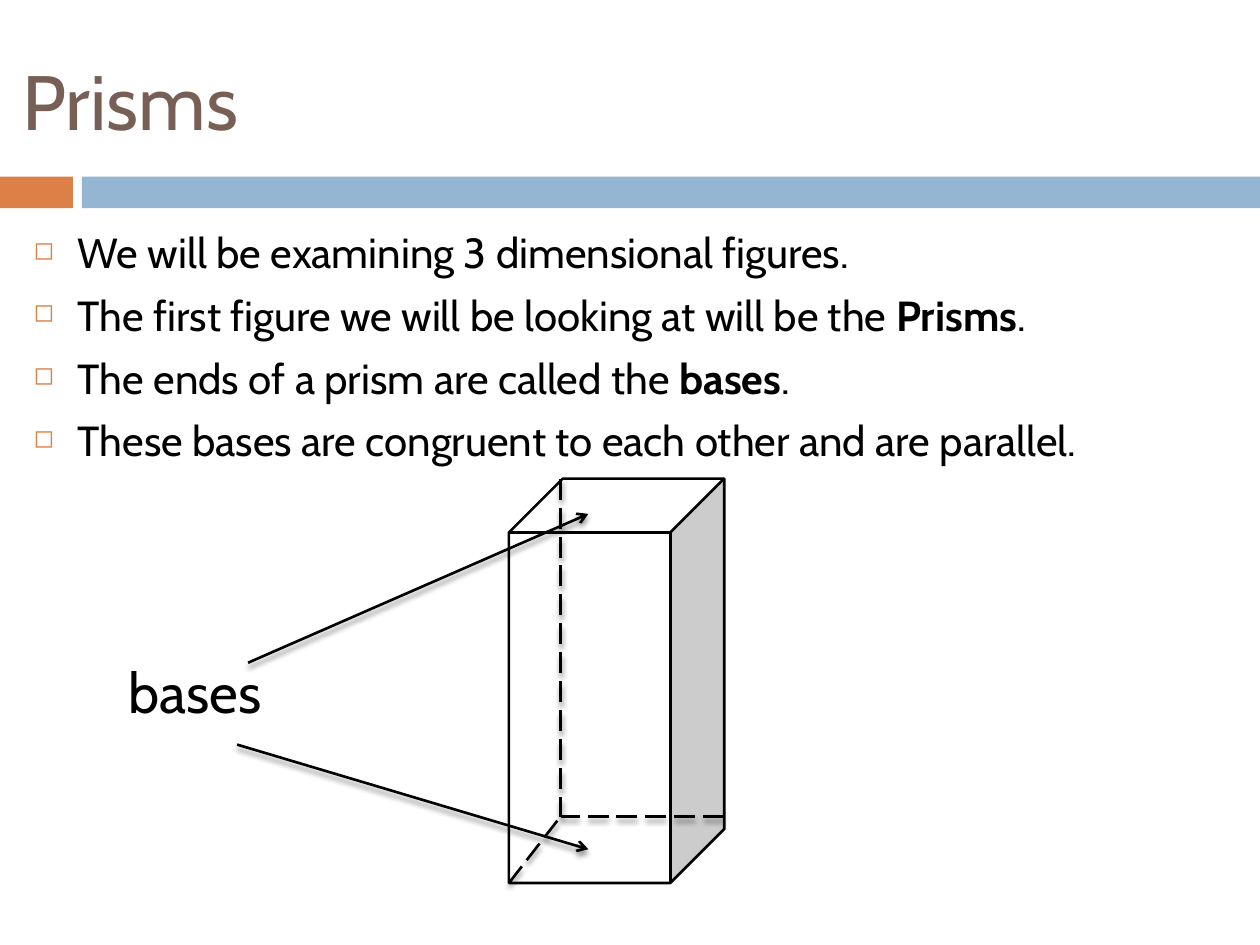
from lxml import etree
from pptx import Presentation
from pptx.dml.color import RGBColor
from pptx.enum.dml import MSO_LINE
from pptx.enum.shapes import MSO_CONNECTOR, MSO_SHAPE
from pptx.enum.text import MSO_ANCHOR
from pptx.oxml.ns import qn
from pptx.util import Cm, Pt

RECT, CUBE = MSO_SHAPE.RECTANGLE, MSO_SHAPE.CUBE
STRAIGHT, LONG_DASH = MSO_CONNECTOR.STRAIGHT, MSO_LINE.LONG_DASH
TOP, MIDDLE = MSO_ANCHOR.TOP, MSO_ANCHOR.MIDDLE

# Content: each paragraph is a list of (text, bold) runs
FONT, BLACK, WHITE, BROWN = "Cabin", "000000", "FFFFFF", "775F55"
ORANGE, BLUE = "DD8047", "94B6D2"
TITLE = [("Prisms", False)]
LABEL = [("bases", False)]
BULLETS = [
    [("We will be examining 3 dimensional figures.", False)],
    [("The first figure we will be looking at will be the ", False),
     ("Prisms", True), (".", False)],
    [("The ends of a prism are called the ", False),
     ("bases", True), (".", False)],
    [("These bases are congruent to each other and are parallel.", False)],
]

# Geometry in centimetres
SLIDE_W, SLIDE_H = 25.4, 19.05
BAR_TOP, BAR_H = 3.56, 0.64
BARS = [(0, 1.47, ORANGE), (1.65, SLIDE_W - 1.65, BLUE)]
LEFT, UP, WIDTH, HEIGHT = 10.26, 9.65, 4.34, 8.15
CORNER = (11.3, 16.46)
HIDDEN_ENDS = [(LEFT, UP + HEIGHT), (LEFT + WIDTH, CORNER[1]), (CORNER[0], UP)]
ARROWS = [((5, 13.36), (11.86, 10.36)), ((4.78, 15.01), (11.86, 17.12))]


def rgb(color):
    return RGBColor.from_string(color)


def sub(parent, tag, **attrs):
    return etree.SubElement(parent, qn(tag), attrs)


def add_solid(shapes, kind, box, fill, line=None):
    sp = shapes.add_shape(kind, *map(Cm, box))
    sp.shadow.inherit = False
    sp.fill.solid()
    sp.fill.fore_color.rgb = rgb(fill)
    if line:
        sp.line.color.rgb = rgb(line)
        sp.line.width = Pt(1.5)
    else:
        sp.line.fill.background()
    return sp


def add_line(shapes, start, end, dash=None, arrow=False):
    cx = shapes.add_connector(STRAIGHT, *map(Cm, start + end))
    cx.line.color.rgb = rgb(BLACK)
    cx.line.width = Pt(1.5)
    if dash:
        cx.line.dash_style = dash
    if arrow:
        sub(cx.line._get_or_add_ln(), "a:tailEnd", type="arrow")
    # Soft shadow straight below the line
    effects = sub(cx._element.spPr, "a:effectLst")
    shadow = sub(effects, "a:outerShdw", blurRad=str(Pt(3)), dist=str(Pt(2.4)),
                 dir="5400000", rotWithShape="0")
    sub(sub(shadow, "a:srgbClr", val=BLACK), "a:alpha", val="45000")


def add_bullet(p):
    p.space_before = Pt(7)
    pPr = p._p.get_or_add_pPr()
    pPr.set("marL", str(Cm(0.89)))
    pPr.set("indent", str(-Cm(0.89)))
    sub(sub(pPr, "a:buClr"), "a:srgbClr", val=ORANGE)
    sub(pPr, "a:buSzPct", val="60000")
    sub(pPr, "a:buChar", char="◻")


def add_text(shapes, box, paragraphs, size, color=BLACK, anchor=TOP, bullets=False):
    tf = shapes.add_textbox(*map(Cm, box)).text_frame
    tf.word_wrap = True
    tf.vertical_anchor = anchor
    for i, runs in enumerate(paragraphs):
        p = tf.add_paragraph() if i else tf.paragraphs[0]
        if bullets:
            add_bullet(p)
        for text, bold in runs:
            r = p.add_run()
            r.text = text
            r.font.name, r.font.size, r.font.bold = FONT, Pt(size), bold
            r.font.color.rgb = rgb(color)


prs = Presentation()
prs.slide_width, prs.slide_height = Cm(SLIDE_W), Cm(SLIDE_H)
s = prs.slides.add_slide(prs.slide_layouts[6])

# Divider bars, title and bullets
for x, w, color in BARS:
    add_solid(s.shapes, RECT, (x, BAR_TOP, w, BAR_H), color)
add_text(s.shapes, (0.2, 0.64, 24.13, 2.74), [TITLE], 44, BROWN, MIDDLE)
add_text(s.shapes, (0.43, 4.45, 23.93, 7.82), BULLETS, 24, bullets=True)

# Prism with its hidden edges
prism = s.shapes.add_group_shape()
add_solid(prism.shapes, CUBE, (LEFT, UP, WIDTH, HEIGHT), WHITE, BLACK)
for end in HIDDEN_ENDS:
    add_line(prism.shapes, end, CORNER, dash=LONG_DASH)

# Label with arrows to both bases
add_text(s.shapes, (2.34, 13.13, 4.45, 1.63), [LABEL], 32)
for start, end in ARROWS:
    add_line(s.shapes, start, end, arrow=True)

prs.save("out.pptx")
